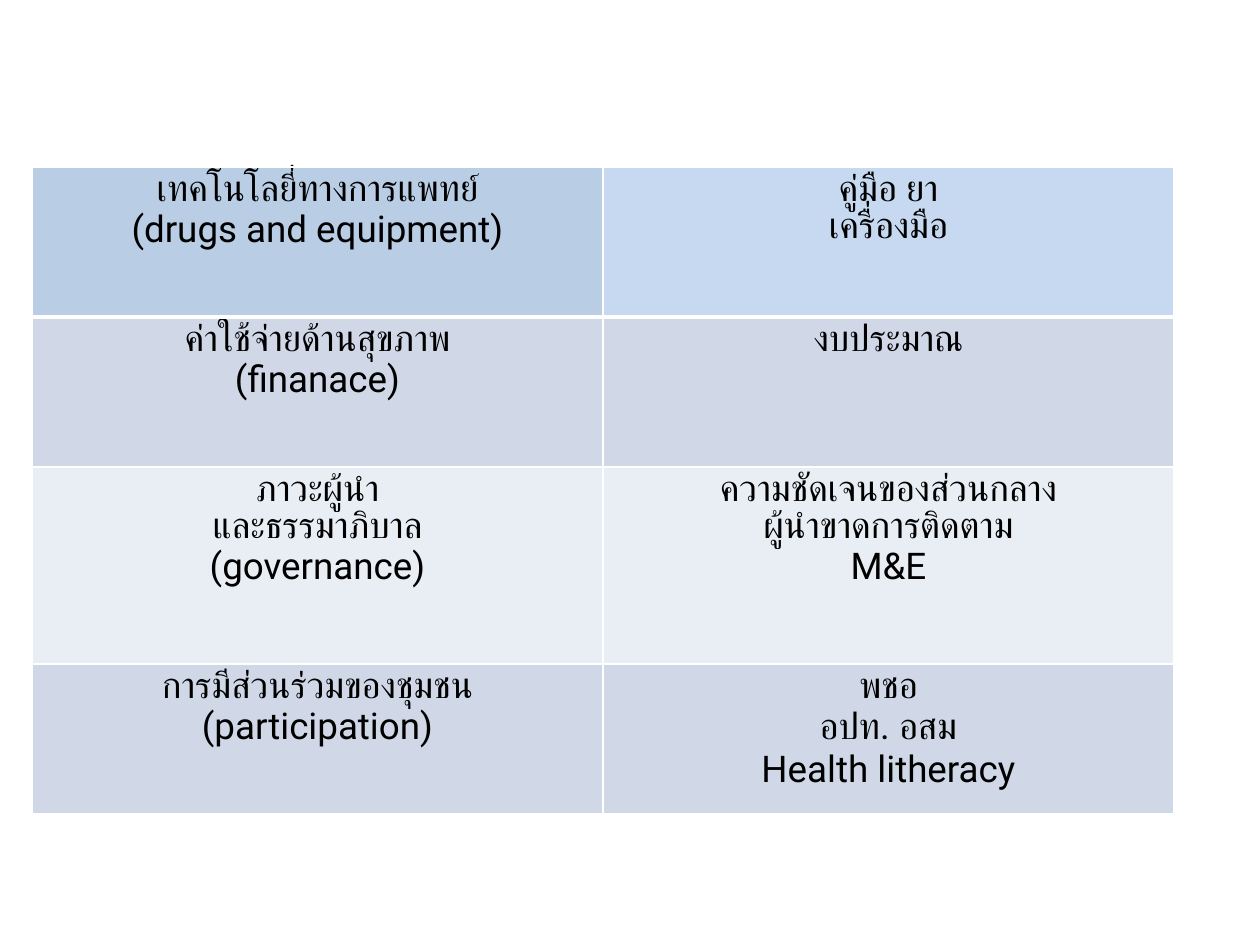
from lxml.etree import SubElement
from pptx import Presentation
from pptx.dml.color import RGBColor
from pptx.enum.text import PP_ALIGN
from pptx.oxml.ns import qn
from pptx.util import Pt

PX = 914400 // 126
COLUMN_WIDTH = 571
ROW_HEIGHTS = [150, 150, 197, 150]
ROW_FILLS = [("B9CDE5", "C6D9F1"), ("D0D8E8",) * 2, ("E9EDF4",) * 2, ("D0D8E8",) * 2]
HEALTH_SYSTEM = [
    ("เทคโนโลยี่ทางการแพทย์\n(drugs and equipment)", "คู่มือ ยา\nเครื่องมือ"),
    ("ค่าใช้จ่ายด้านสุขภาพ\n(finanace)", "งบประมาณ"),
    ("ภาวะผู้นำ\nและธรรมาภิบาล\n(governance)",
     "ความชัดเจนของส่วนกลาง\nผู้นำขาดการติดตาม\nM&E"),
    ("การมีส่วนร่วมของชุมชน\n(participation)", "พชอ\nอปท. อสม\nHealth litheracy"),
]


def write(frame, text, size=21, font="Roboto", color="000000", align=PP_ALIGN.CENTER):
    frame.text = text
    for paragraph in frame.paragraphs:
        paragraph.alignment = align
        for run in paragraph.runs:
            run.font.size = Pt(size)
            run.font.name = font
            run.font.bold = False
            run.font.color.rgb = RGBColor.from_string(color)


def add_border(cell, side, points, color="FFFFFF"):
    line = SubElement(cell._tc.get_or_add_tcPr(), qn(f"a:ln{side}"), w=str(Pt(points)))
    SubElement(SubElement(line, qn("a:solidFill")), qn("a:srgbClr"), val=color)


prs = Presentation()
prs.slide_width, prs.slide_height = 1260 * PX, 945 * PX
slide = prs.slides.add_slide(prs.slide_layouts[6])

table = slide.shapes.add_table(
    len(HEALTH_SYSTEM), 2, 32 * PX, 167 * PX,
    2 * COLUMN_WIDTH * PX, sum(ROW_HEIGHTS) * PX).table
for column in table.columns:
    column.width = COLUMN_WIDTH * PX

for r, (topics, fills) in enumerate(zip(HEALTH_SYSTEM, ROW_FILLS)):
    table.rows[r].height = ROW_HEIGHTS[r] * PX
    for c, (topic, fill) in enumerate(zip(topics, fills)):
        cell = table.cell(r, c)
        cell.margin_left = cell.margin_right = 9 * PX
        cell.margin_top = cell.margin_bottom = 5 * PX
        write(cell.text_frame, topic)
        for side in "LRTB":
            below_first = (r, side) in [(0, "B"), (1, "T")]
            add_border(cell, side, 3 if below_first else 1)
        cell.fill.solid()
        cell.fill.fore_color.rgb = RGBColor.from_string(fill)

prs.save("out.pptx")
